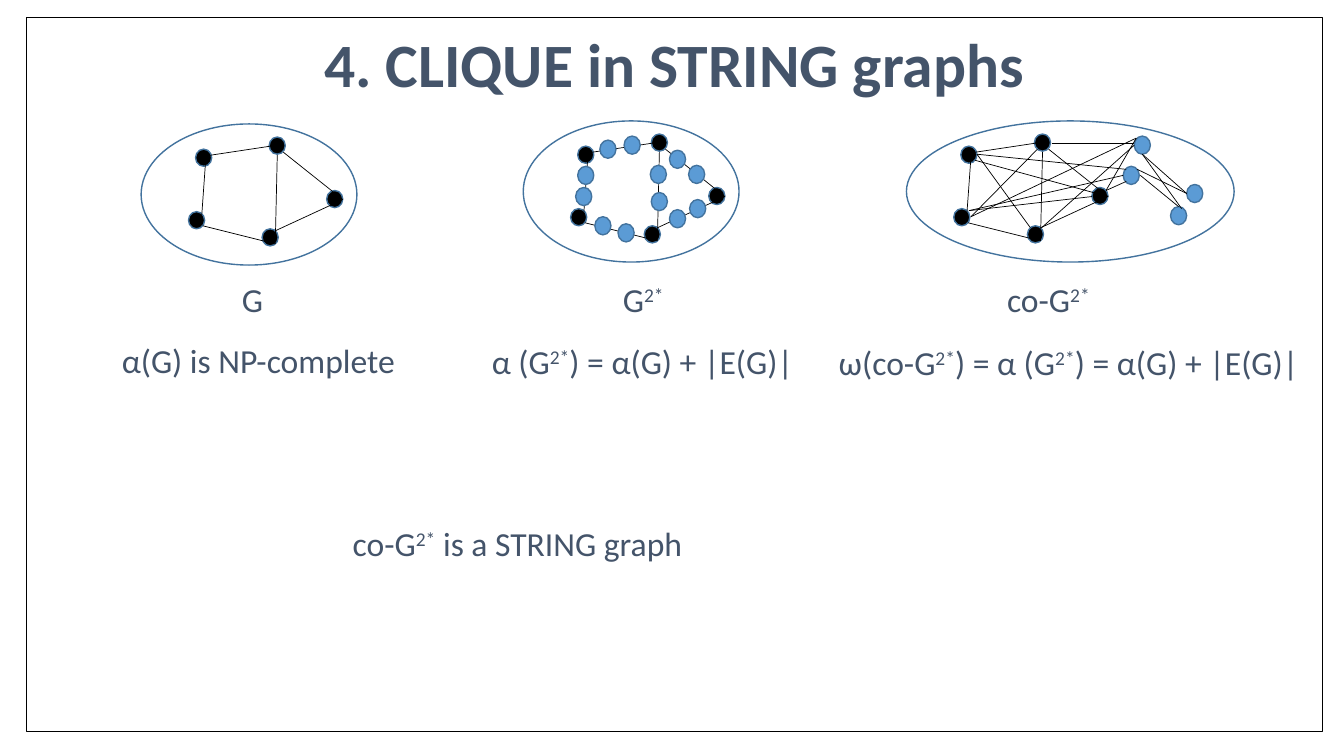
from dataclasses import dataclass

from lxml import etree
from pptx import Presentation
from pptx import util as u
from pptx.dml.color import RGBColor
from pptx.enum import shapes, text
from pptx.oxml.ns import qn

SCALE = 9144  # EMU per px, at 100 px to the inch


@dataclass(frozen=True)
class Theme:
    font: str = "Calibri"
    ink: str = "44546A"
    black: str = "000000"
    white: str = "FFFFFF"
    blue: str = "5B9BD5"
    rim: str = "43739E"
    title: int = 44
    body: int = 24
    hair: float = 0.5
    frame: float = 0.75
    ring: float = 1


THEME = Theme()
DOT = (16, 17)
NEW_DOT = (16, 18)

# Places below are relative to the top left of a graph's ellipse.
NODES = [(54, 25), (127, 13), (47, 87), (120, 104), (184, 66)]
EDGES = [(62, 32, 135, 21), (141, 28, 200, 75), (133, 106, 200, 75),
         (133, 119, 135, 31), (60, 92, 64, 36), (61, 101, 133, 119)]
SPLITS = [(54, 45), (52, 66), (76, 19), (100, 15), (127, 71), (126, 44),
          (165, 78), (164, 44), (145, 29), (94, 102), (145, 88), (71, 95)]
CO_SPLITS = [(215, 45), (226, 15), (262, 85), (278, 63)]
CO_EDGES = [(70, 33, 123, 106), (130, 28, 64, 95), (184, 75, 62, 89),
            (200, 75, 68, 39), (144, 22, 226, 22), (64, 95, 228, 17),
            (134, 106, 226, 24), (198, 69, 228, 17), (70, 33, 218, 48),
            (62, 89, 215, 54), (198, 69, 218, 60), (234, 33, 278, 72),
            (229, 48, 278, 72), (234, 33, 273, 87), (232, 54, 270, 85)]

# Ellipse box, new nodes, extra edges
GRAPHS = [((140, 123, 214, 140), [], []),
          ((519, 120, 214, 140), SPLITS, []),
          ((899, 120, 325, 140), CO_SPLITS, CO_EDGES)]

# Text between two ^ marks is raised.
LABELS = [((230, 272, 50, 50), "G"),
          ((608, 272, 75, 50), "G^2*^"),
          ((989, 272, 116, 50), "co-G^2*^"),
          ((111, 332, 310, 50), "α(G) is NP-complete"),
          ((478, 333, 340, 50), "α (G^2*^) = α(G) + |E(G)|"),
          ((822, 334, 492, 50), "ω(co-G^2*^) = α (G^2*^) = α(G) + |E(G)|"),
          ((340, 514, 482, 50), "co-G^2*^ is a STRING graph")]


def emu(*px):
    return [u.Emu(n * SCALE) for n in px]


def rgb(code):
    return RGBColor.from_string(code)


def write(para, words, size, bold=False, raised=False):
    run = para.add_run()
    run.text = words
    font = run.font
    font.name, font.size, font.bold = THEME.font, u.Pt(size), bold
    font.color.rgb = rgb(THEME.ink)
    if raised:
        run._r.get_or_add_rPr().set("baseline", "30000")


def draw(slide, kind, box, fill, line, width):
    shape = slide.shapes.add_shape(kind, *emu(*box))
    shape.shadow.inherit = False
    if fill:
        shape.fill.solid()
        shape.fill.fore_color.rgb = rgb(fill)
    else:
        shape.fill.background()
    shape.line.color.rgb = rgb(line)
    shape.line.width = u.Pt(width)
    return shape


def oval(slide, box, fill=None):
    draw(slide, shapes.MSO_SHAPE.OVAL, box, fill, THEME.rim, THEME.ring)


def edge(slide, ends):
    line = slide.shapes.add_connector(shapes.MSO_CONNECTOR.STRAIGHT, *emu(*ends))
    line.line.color.rgb = rgb(THEME.black)
    line.line.width = u.Pt(THEME.hair)
    etree.SubElement(line.element.spPr, qn("a:effectLst"))


def header(slide, box):
    """Place the frame in the box and the title along its top."""
    left, top, width, _ = box
    frame = draw(slide, shapes.MSO_SHAPE.RECTANGLE, box, THEME.white,
                 THEME.black, THEME.frame)
    title = slide.shapes.title
    title.element.addprevious(frame.element)
    title.left, title.top, title.width, title.height = emu(left, top + 5, width, 80)
    body = title.text_frame
    body.vertical_anchor = text.MSO_ANCHOR.MIDDLE
    para = body.paragraphs[0]
    para.alignment = text.PP_ALIGN.CENTER
    write(para, "4. CLIQUE in STRING graphs", THEME.title, bold=True)


def graph(slide, box, splits, extra):
    left, top = box[:2]

    def dots(spots, size, fill):
        for x, y in spots:
            oval(slide, (left + x, top + y, *size), fill)

    def links(ends):
        for x, y, to_x, to_y in ends:
            edge(slide, (left + x, top + y, left + to_x, top + to_y))

    oval(slide, box)
    dots(NODES, DOT, THEME.black)
    links(EDGES)
    dots(splits, NEW_DOT, THEME.blue)
    links(extra)


def label(slide, box, words):
    body = slide.shapes.add_textbox(*emu(*box)).text_frame
    body.word_wrap = True
    body.auto_size = text.MSO_AUTO_SIZE.SHAPE_TO_FIT_TEXT
    for i, part in enumerate(words.split("^")):
        if part:
            write(body.paragraphs[0], part, THEME.body, raised=i % 2 == 1)


def main():
    deck = Presentation()
    deck.slide_width, deck.slide_height = emu(1333, 750)
    slide = deck.slides.add_slide(deck.slide_layouts[5])
    header(slide, (26, 17, 1286, 709))
    for parts in GRAPHS:
        graph(slide, *parts)
    for parts in LABELS:
        label(slide, *parts)
    deck.save("out.pptx")


if __name__ == "__main__":
    main()
